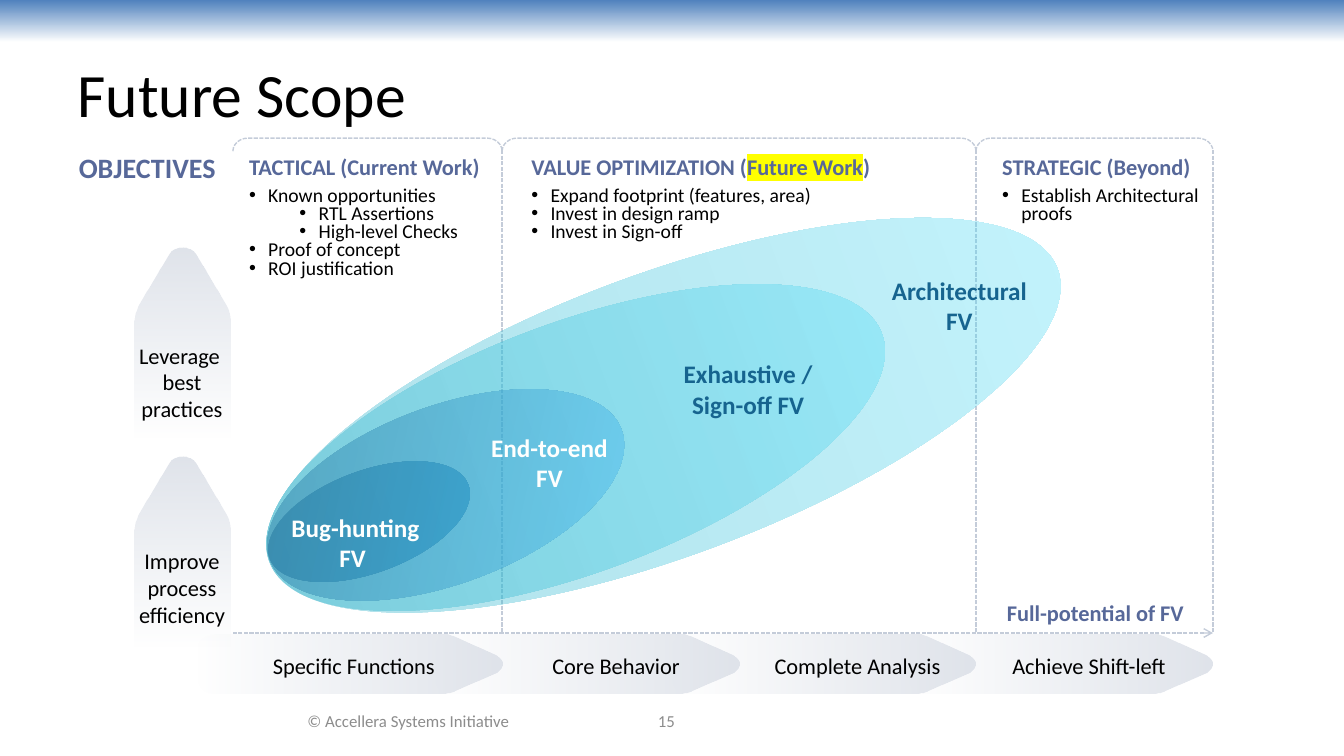
from dataclasses import dataclass

from lxml import etree
from pptx import Presentation
from pptx import util as u
from pptx.dml.color import RGBColor
from pptx.enum import dml, shapes, text
from pptx.oxml.ns import qn


@dataclass(frozen=True)
class Theme:
    font: str = "Calibri"
    black: str = "000000"
    white: str = "FEFFFE"
    grey: str = "8C8C8C"
    head: str = "576899"
    deep: str = "16648F"
    rule: str = "C4CCD9"
    mist: str = "E0E4EB"
    mark: str = "FFFF00"
    title: int = 44
    goal: int = 20
    stage: int = 18
    label: int = 16
    item: int = 14
    foot: int = 12


T = Theme()
MIST = ((T.mist, 0), (T.mist, 100))
AQUA = (("17A4BE", 35), ("56E1FB", 35))

# Outlines in inches: a pair is a straight step, six numbers are a curve
CHEVRON = (
    (2.97, .21), (2.55, .02), (2.53, .01, 2.51, .01, 2.49, 0),
    (2.47, 0, 2.46, 0, 2.44, 0), (.18, 0), (.13, 0, .09, .01, .05, .05),
    (.01, .08, 0, .12, 0, .17), (0, .42), (0, .46, .02, .5, .05, .53),
    (.08, .57, .14, .59, .19, .59), (2.42, .59),
    (2.45, .59, 2.48, .58, 2.51, .58), (2.53, .57, 2.56, .56, 2.58, .55),
    (2.97, .38), (3, .36, 3.03, .33, 3.03, .29),
    (3.03, .26, 3, .23, 2.97, .21))
TOWER = (
    (1.9, .48), (1.9, .53, 1.88, .58, 1.83, .61), (1.35, .89),
    (1.32, .91, 1.3, .92, 1.27, .93), (1.23, .94, 1.19, .95, 1.15, .95),
    (0, .95), (0, 0), (1.17, 0), (1.2, 0, 1.22, .01, 1.24, .01),
    (1.27, .02, 1.29, .03, 1.32, .04), (1.83, .34),
    (1.88, .37, 1.9, .42, 1.9, .48))


def emu(box):
    return [u.Inches(v) for v in box]


def sub(node, tag, **attrs):
    return etree.SubElement(node, qn(tag), attrs)


def blend(shape, stops, angle=0):
    """Fill a shape with a two-stop gradient of (colour, opacity) pairs."""
    shape.shadow.inherit = False
    shape.line.fill.background()
    shape.fill.gradient()
    grad = shape.element.spPr.find(qn("a:gradFill"))
    for child in list(grad):
        grad.remove(child)
    grad.set("rotWithShape", "1")
    row = sub(grad, "a:gsLst")
    for pos, (color, alpha) in zip((0, 100000), stops):
        tone = sub(sub(row, "a:gs", pos=str(pos)), "a:srgbClr", val=color)
        if alpha < 100:
            sub(tone, "a:alpha", val=str(alpha * 1000))
    sub(grad, "a:lin", ang=str(angle * 60000), scaled="0")


def dash(line):
    line.color.rgb = RGBColor.from_string(T.rule)
    line.width = u.Pt(1)
    line.dash_style = dml.MSO_LINE.SQUARE_DOT


def write(par, words, size, color, bold=False):
    run = par.add_run()
    run.text = words
    font = run.font
    font.name, font.size, font.bold = T.font, u.Pt(size), bold
    font.color.rgb = RGBColor.from_string(color)
    return run


def label(slide, box, words, size, color, bold=False, wrap=True, mid=False):
    frame = slide.shapes.add_textbox(*emu(box)).text_frame
    frame.word_wrap = wrap
    if mid:
        frame.vertical_anchor = text.MSO_ANCHOR.MIDDLE
    else:
        frame.auto_size = text.MSO_AUTO_SIZE.SHAPE_TO_FIT_TEXT
    for i, row in enumerate(words.split("\n")):
        par = frame.add_paragraph() if i else frame.paragraphs[0]
        par.alignment = text.PP_ALIGN.CENTER
        write(par, row, size, color, bold)


def outline(slide, left, top, steps, turn=0):
    ends = [emu((left + s[-2], top + s[-1])) for s in steps]
    build = slide.shapes.build_freeform(*ends[0])
    build.add_line_segments(ends[1:], close=True)
    shape = build.convert_to_shape()
    lines = list(shape.element.iter(qn("a:lnTo")))
    for line, step in zip(lines, steps[1:]):
        if len(step) == 6:
            curve = etree.Element(qn("a:cubicBezTo"))
            for x, y in zip(step[::2], step[1::2]):
                sub(curve, "a:pt", x=str(u.Inches(x)), y=str(u.Inches(y)))
            line.getparent().replace(line, curve)
    shape.rotation = turn
    blend(shape, MIST)


def rule(slide, ends, arrow=False):
    line = slide.shapes.add_connector(shapes.MSO_CONNECTOR.STRAIGHT, *emu(ends))
    dash(line.line)
    if arrow:
        sub(line.element.spPr.find(qn("a:ln")), "a:headEnd", type="arrow")
    sub(line.element.spPr, "a:effectLst")


def place(holder, box):
    """Move a placeholder into its box and to the front."""
    holder.left, holder.top, holder.width, holder.height = emu(box)
    holder.element.getparent().append(holder.element)
    holder.text_frame.auto_size = text.MSO_AUTO_SIZE.NONE
    holder.text_frame.word_wrap = True


def header(slide, box):
    x, y, w, h = box
    band = slide.shapes.add_shape(shapes.MSO_SHAPE.RECTANGLE,
                                  *emu((x, y, w, .42)))
    blend(band, (("4F81BD", 100), ("FFFFFF", 100)), 90)
    title = slide.shapes.title
    place(title, (x + .67, y + .3, 12, h - .3))
    title.text_frame.vertical_anchor = text.MSO_ANCHOR.MIDDLE
    par = title.text_frame.paragraphs[0]
    par.alignment = text.PP_ALIGN.LEFT
    write(par, "Future Scope", T.title, T.black)


def footer(slide, box):
    x, y, _, h = box
    for left, wide, words in ((0, 3.22, "© Accellera Systems Initiative"),
                              (2.89, 2.56, "15")):
        label(slide, (x + left, y, wide, h), words, T.foot, T.grey, mid=True)


def goals(slide, box):
    x, y, w, _ = box
    label(slide, (x, y, w, .44), "OBJECTIVES", T.goal, T.head, True)
    for top, left, wide, drop, words in (
            (1.49, .63, 1.27, .41, "Leverage \nbest practices"),
            (3.56, .69, 1.15, .38, "Improve process efficiency")):
        outline(slide, x + .32, y + top, TOWER, 270)
        label(slide, (x + left, y + top + drop, wide, .91), words,
              T.label, T.black)


def steps(slide, box):
    x, y, _, _ = box
    for i in reversed(range(4)):
        outline(slide, x + 2.35 * i, y, CHEVRON)
    for left, wide, name in (
            (.28, 2.56, "Specific Functions"), (3.39, 1.54, "Core Behavior"),
            (5.62, 1.87, "Complete Analysis"),
            (7.97, 1.76, "Achieve Shift-left")):
        label(slide, (x + left, y + .13, wide, .37), name,
              T.label, T.black, wrap=wide > 2)


def frame(slide, box):
    x, y, w, h = box
    rule(slide, (x + w, y + h, x, y + h), arrow=True)
    edges = (2.31, 4.98, 9.68, 12.03)
    for left, right in zip(edges, edges[1:]):
        rule(slide, (right, y + .12, right, y + h))
        wide, deep = right - left, .13
        top = slide.shapes.add_shape(
            shapes.MSO_SHAPE.LEFT_BRACKET,
            *emu(((left + right - deep) / 2, y + (deep - wide) / 2,
                  deep, wide)))
        top.rotation = 90
        top.adjustments[0] = 1.165
        top.shadow.inherit = False
        top.fill.background()
        dash(top.line)


def ovals(slide, box):
    x, y, _, _ = box
    rings = (
        ((0, 0, 8.34, 2.8), AQUA, 0),
        ((.06, .48, 6.48, 2.48), AQUA, 0),
        ((.15, 1.31, 3.72, 1.76), ((T.deep, 40), ("45BFFB", 40)), 33),
        ((.2, 1.95, 2.1, 1.01), ((T.deep, 40), ("0481BE", 40)), 33))
    for (left, top, w, h), stops, angle in rings:
        ring = slide.shapes.add_shape(shapes.MSO_SHAPE.OVAL,
                                      *emu((x + left, y + top, w, h)))
        ring.rotation = 339.6
        blend(ring, stops, angle)
    for left, top, wide, words, color in (
            (.34, 2.31, 1.55, "Bug-hunting FV ", T.white),
            (2.36, 1.52, 1.36, "End-to-end FV", T.white),
            (4.15, .79, 1.72, "Exhaustive / Sign-off FV", T.deep),
            (6.33, -.04, 1.55, "Architectural FV", T.deep)):
        label(slide, (x + left, y + top, wide, .71), words, T.stage, color, True)
    label(slide, (x + 6.99, y + 3.17, 2.93, .37), "Full-potential of FV",
          T.label, T.head, True)


def column(holder, box, heads, items):
    """Fill a body placeholder with a heading and (level, words) bullets."""
    place(holder, box)
    body = holder.text_frame
    body.vertical_anchor = text.MSO_ANCHOR.TOP
    for i, (level, words) in enumerate([(0, None)] + items):
        par = body.add_paragraph() if i else body.paragraphs[0]
        par.level = level
        par.line_spacing, par.space_before = u.Pt(13), u.Pt(0)
        par.space_after = u.Pt(0 if i else 6)
        props = par._p.get_or_add_pPr()
        props.set("marL", str(u.Inches(.19 + .5 * level if i else 0)))
        props.set("indent", str(u.Inches(-.19 if i else 0)))
        if i:
            sub(props, "a:buFont", typeface="Arial")
            sub(props, "a:buChar", char="•")
            write(par, words, T.item, T.black)
            continue
        sub(props, "a:buNone")
        for part, lit in heads:
            run = write(par, part, T.label, T.head, True)
            if lit:
                glow = etree.Element(qn("a:highlight"))
                sub(glow, "a:srgbClr", val=T.mark)
                run.font._element.find(qn("a:solidFill")).addnext(glow)


def columns(slide, box):
    x, y, _, h = box
    lists = (
        (0, 2.55, [("TACTICAL (Current Work)", False)],
         [(0, "Known opportunities"), (1, "RTL Assertions"),
          (1, "High-level Checks"), (0, "Proof of concept"),
          (0, "ROI justification")]),
        (2.8, 3.77, [("VALUE OPTIMIZATION (", False), ("Future Work", True),
                     (")", False)],
         [(0, "Expand footprint (features, area)"),
          (0, "Invest in design ramp"), (0, "Invest in Sign-off")]),
        (7.47, 2.2, [("STRATEGIC (Beyond)", False)],
         [(0, "Establish Architectural proofs")]))
    holders = list(slide.placeholders)[1:]
    for holder, (left, wide, heads, items) in zip(holders, lists):
        deep = h - .18 * (5 - max(len(items), 2))
        column(holder, (x + left, y, wide, deep), heads, items)
    for spare in holders[len(lists):]:
        spare.element.getparent().remove(spare.element)


def main():
    deck = Presentation()
    deck.slide_width, deck.slide_height = emu((13.33, 7.5))
    slide = deck.slides.add_slide(deck.slide_layouts[4])
    header(slide, (0, 0, 13.33, 1.55))
    footer(slide, (2.44, 6.95, 5.45, .4))
    steps(slide, (1.95, 6.29, 10.08, .59))
    goals(slide, (.54, 1.44, 1.84, 4.98))
    frame(slide, (2.3, 1.37, 9.73, 4.91))
    ovals(slide, (2.41, 2.72, 8.34, 2.8))
    columns(slide, (2.37, 1.55, 9.67, 1.29))
    deck.save("out.pptx")


if __name__ == "__main__":
    main()
